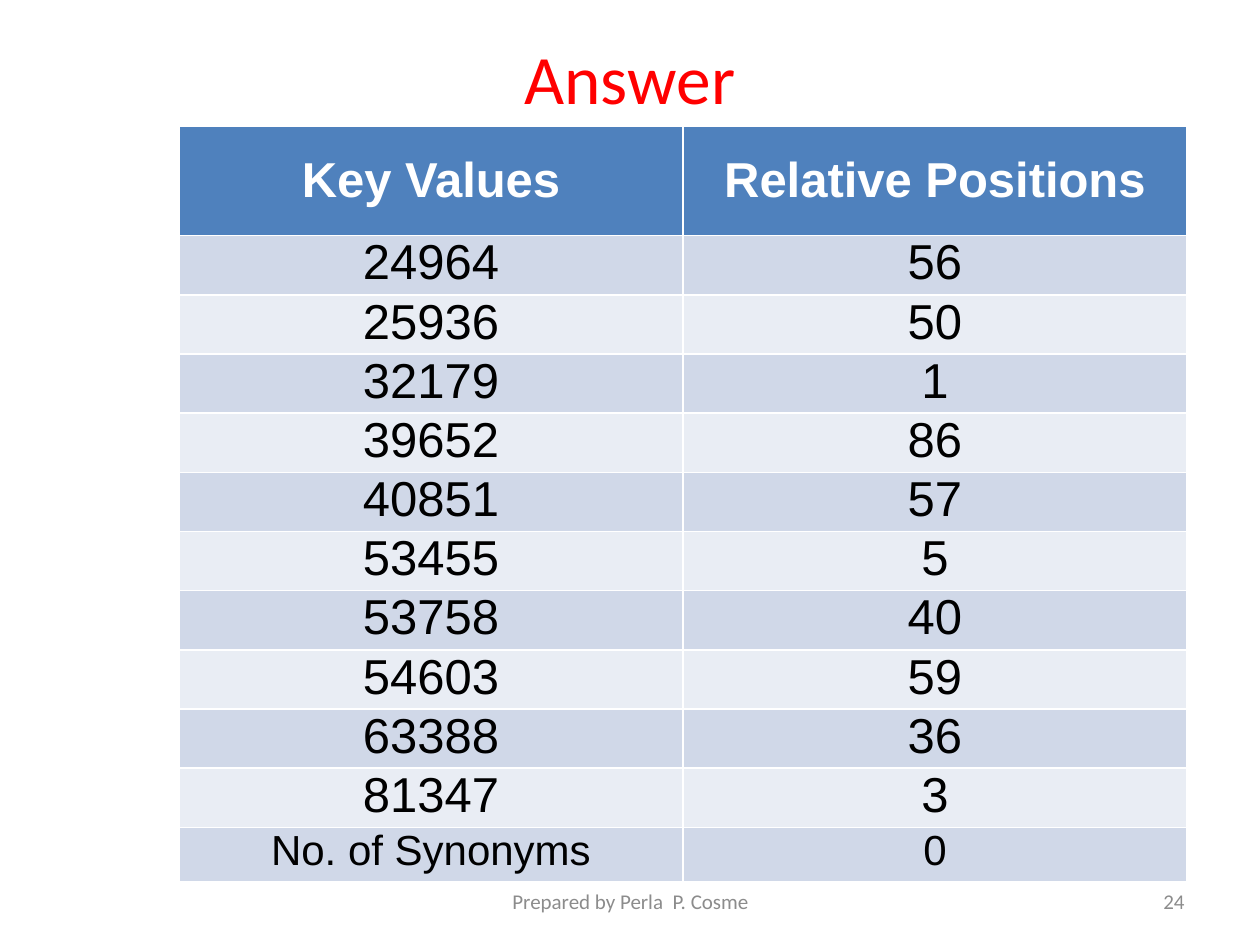
"""Build the answer slide: a table of key values and their relative positions."""
from pptx import Presentation
from pptx.dml.color import RGBColor
from pptx.enum.text import MSO_ANCHOR, PP_ALIGN
from pptx.util import Inches, Pt

RED = RGBColor(0xFF, 0x00, 0x00)
GREY = RGBColor(0x8C, 0x8C, 0x8C)
WHITE = RGBColor(0xFF, 0xFF, 0xFF)
BLACK = RGBColor(0x00, 0x00, 0x00)
HEADER_BLUE = RGBColor(0x4F, 0x81, 0xBD)
BAND_COLORS = (RGBColor(0xE9, 0xED, 0xF4), RGBColor(0xD0, 0xD8, 0xE8))

HEADER = ("Key Values", "Relative Positions")
POSITIONS = (
    ("24964", "56"),
    ("25936", "50"),
    ("32179", "1"),
    ("39652", "86"),
    ("40851", "57"),
    ("53455", "5"),
    ("53758", "40"),
    ("54603", "59"),
    ("63388", "36"),
    ("81347", "3"),
)
SUMMARY = ("No. of Synonyms", "0")


def style_paragraph(paragraph, font_name, size, color, align, bold=False):
    """Set the font and alignment of a paragraph."""
    paragraph.alignment = align
    font = paragraph.font
    font.name, font.size, font.bold = font_name, Pt(size), bold
    font.color.rgb = color


def add_text(page, text, left, top, width, height, size, color, align=PP_ALIGN.CENTER):
    """Add a vertically centred line of text."""
    box = page.shapes.add_textbox(Inches(left), Inches(top), Inches(width), Inches(height))
    frame = box.text_frame
    frame.word_wrap = True
    frame.vertical_anchor = MSO_ANCHOR.MIDDLE
    frame.text = text
    style_paragraph(frame.paragraphs[0], "Calibri", size, color, align)


def fill_row(table, index, values, height, size, fill, color=BLACK, header=False):
    """Write and format one table row."""
    table.rows[index].height = Inches(height)
    for cell, value in zip(table.rows[index].cells, values):
        cell.text = value
        cell.margin_left = cell.margin_right = Inches(0.07)
        cell.margin_top = cell.margin_bottom = 0
        cell.vertical_anchor = MSO_ANCHOR.MIDDLE if header else MSO_ANCHOR.TOP
        cell.fill.solid()
        cell.fill.fore_color.rgb = fill
        style_paragraph(cell.text_frame.paragraphs[0], "Arial", size, color,
                        PP_ALIGN.CENTER, header)


def add_positions_table(page):
    """Add the table with its header, banded rows and summary."""
    row_count = len(POSITIONS) + 2
    table = page.shapes.add_table(row_count, len(HEADER), Inches(1.42), Inches(1),
                                  Inches(8), Inches(6)).table
    fill_row(table, 0, HEADER, 0.87, 28, HEADER_BLUE, WHITE, header=True)
    for index, values in enumerate(POSITIONS, start=1):
        fill_row(table, index, values, 0.47, 28, BAND_COLORS[index % 2])
    last = row_count - 1
    fill_row(table, last, SUMMARY, 0.43, 24, BAND_COLORS[last % 2])


def main():
    """Create and save the slide."""
    deck = Presentation()
    deck.slide_width, deck.slide_height = Inches(10), Inches(7.5)
    page = deck.slides.add_slide(deck.slide_layouts[6])
    add_text(page, "Answer", 0.5, 0.3, 9, 0.62, 39.6, RED)
    add_positions_table(page)
    add_text(page, "Prepared by Perla  P. Cosme", 3.42, 6.95, 3.17, 0.4, 12, GREY)
    add_text(page, "24", 7.17, 6.95, 2.33, 0.4, 12, GREY, PP_ALIGN.RIGHT)
    deck.save("out.pptx")


if __name__ == "__main__":
    main()
